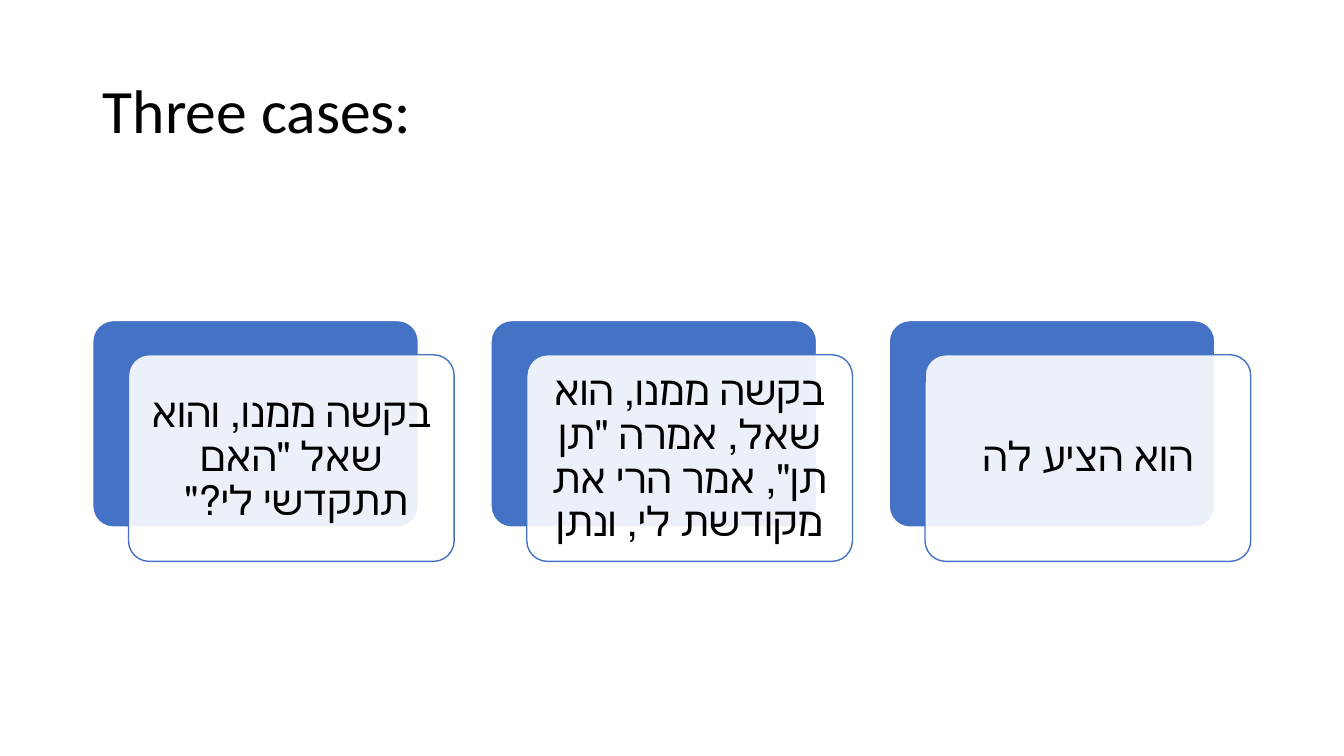
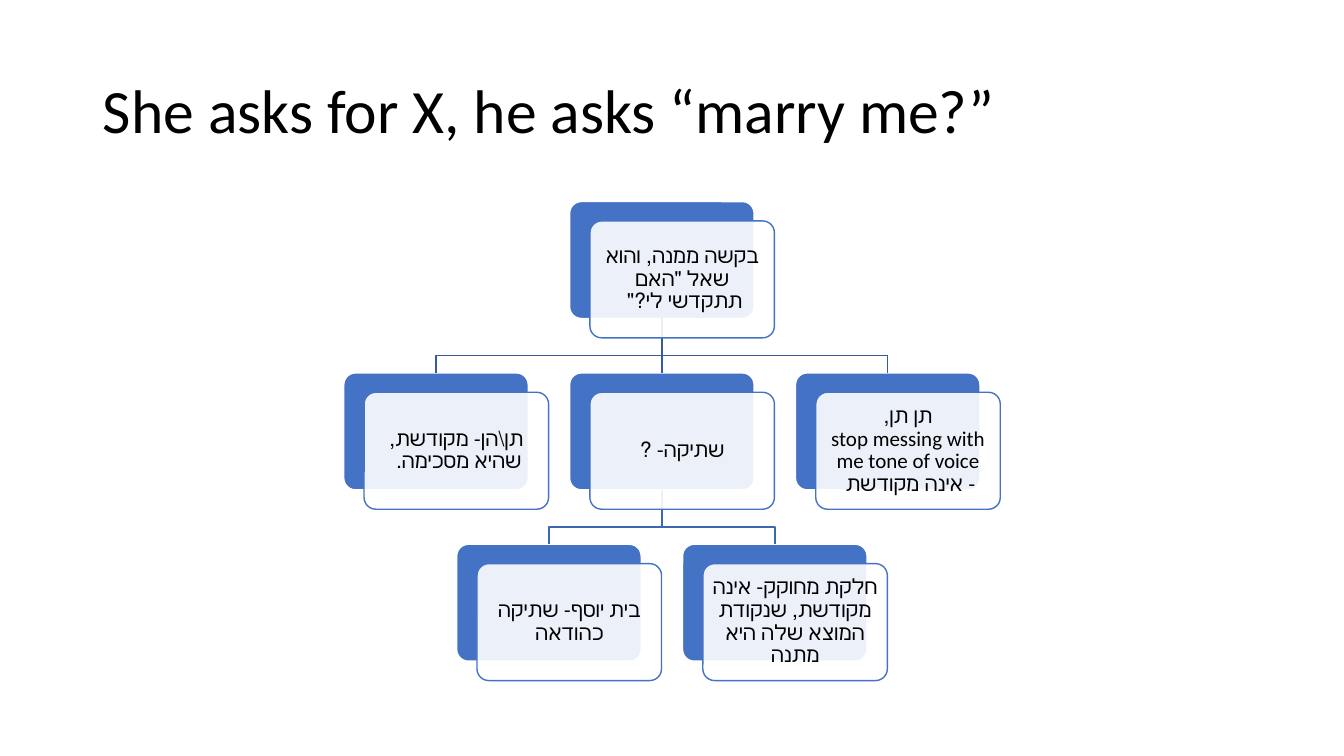
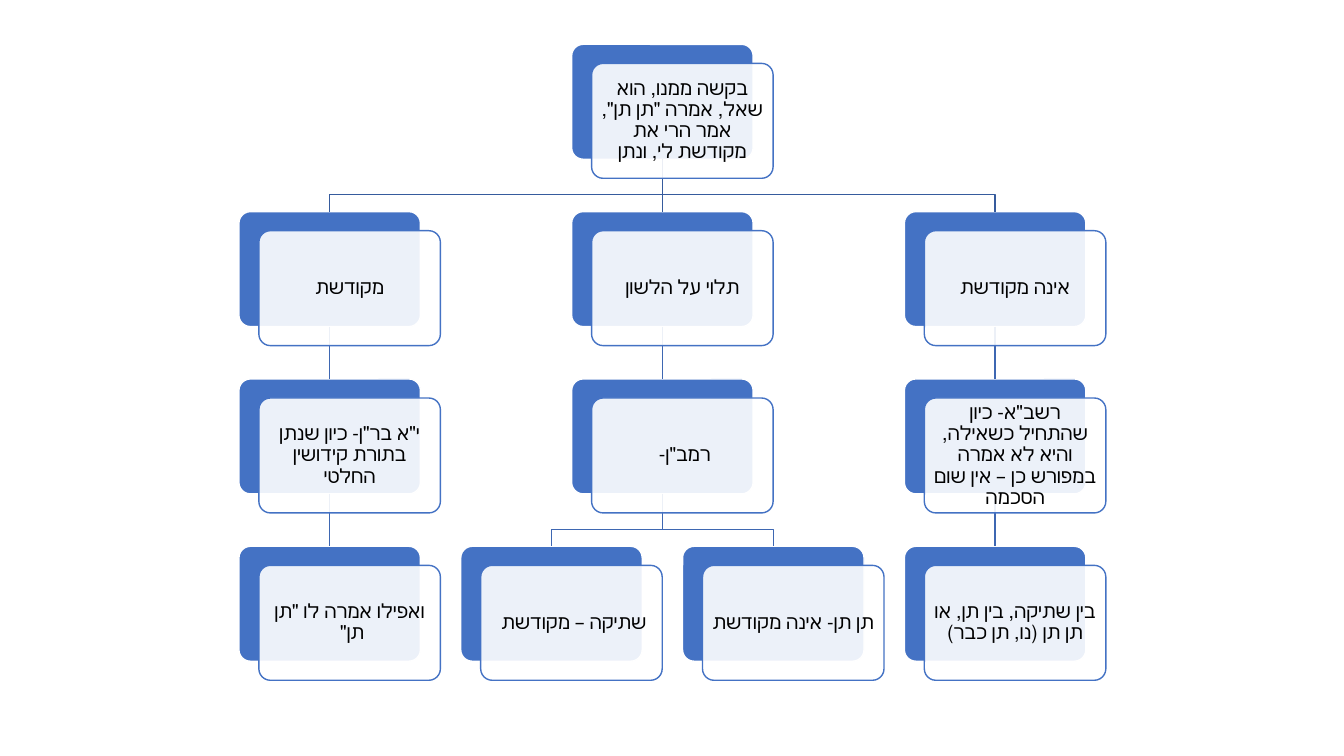
from dataclasses import dataclass
from typing import Optional

from lxml import etree
from pptx import Presentation
from pptx.dml.color import RGBColor
from pptx.enum.shapes import MSO_CONNECTOR, MSO_SHAPE
from pptx.enum.text import MSO_ANCHOR, MSO_AUTO_SIZE, PP_ALIGN
from pptx.oxml.ns import qn
from pptx.shapes.autoshape import Shape
from pptx.slide import Slide
from pptx.text.text import TextFrame
from pptx.util import Inches, Pt

ROUND = MSO_SHAPE.ROUNDED_RECTANGLE
STRAIGHT = MSO_CONNECTOR.STRAIGHT
MIDDLE = MSO_ANCHOR.MIDDLE
NO_FIT = MSO_AUTO_SIZE.NONE
LEFT = PP_ALIGN.LEFT
CENTER = PP_ALIGN.CENTER

FONT = "Calibri"
BLACK, WHITE, BLUE = "000000", "FFFFFF", "4472C4"
TOP_LINE, LOW_LINE = "365B9D", "3E67B2"
BEND = 0.17
SHIFT_X, SHIFT_Y = 0.11, 0.105


@dataclass(frozen=True)
class Node:
    text: str
    col: float
    row: int = 0
    parent: Optional[int] = None


@dataclass(frozen=True)
class Grid:
    left: float
    top: float
    step_x: float
    step_y: float
    width: float
    height: float
    size: int
    inset: float


@dataclass(frozen=True)
class Page:
    title: str
    grid: Grid
    nodes: tuple[Node, ...]


PAGES = (
    Page("Three cases:", Grid(0.92, 3.18, 3.95, 0, 3.23, 2.05, 29, 0.12), (
        Node('בקשה ממנו, והוא שאל "האם תתקדשי לי?" ', 0),
        Node('בקשה ממנו, הוא שאל, אמרה "תן תן", אמר הרי את מקודשת לי, ונתן', 1),
        Node("הוא הציע לה", 2),
    )),
    Page("She asks for X, he asks “marry me?”",
         Grid(3.41, 2, 2.24, 1.7, 1.83, 1.16, 15, 0.06), (
        Node('בקשה ממנה, והוא שאל "האם תתקדשי לי?" ', 1),
        Node("תן\\הן- מקודשת, שהיא מסכימה. ", 0, 1, 0),
        Node("שתיקה- ?", 1, 1, 0),
        Node("בית יוסף- שתיקה כהודאה", 0.5, 2, 2),
        Node("חלקת מחוקק- אינה מקודשת, שנקודת המוצא שלה היא מתנה", 1.5, 2, 2),
        Node("תן תן,\nstop messing with me tone of voice\n- אינה מקודשת ", 2, 1, 0),
    )),
    Page("", Grid(2.37, 0.44, 2.2, 1.66, 1.8, 1.14, 14, 0.06), (
        Node('בקשה ממנו, הוא שאל, אמרה "תן תן", אמר הרי את מקודשת לי, ונתן', 1.5),
        Node("מקודשת", 0, 1, 0),
        Node('י"א בר"ן- כיון שנתן בתורת קידושין החלטי', 0, 2, 1),
        Node('ואפילו אמרה לו "תן תן" ', 0, 3, 2),
        Node("תלוי על הלשון", 1.5, 1, 0),
        Node('רמב"ן- ', 1.5, 2, 4),
        Node("שתיקה – מקודשת ", 1, 3, 5),
        Node("תן תן- אינה מקודשת ", 2, 3, 5),
        Node("אינה מקודשת", 3, 1, 0),
        Node('רשב"א- כיון שהתחיל כשאילה, והיא לא אמרה במפורש כן – אין שום הסכמה', 3, 2, 8),
        Node("בין שתיקה, בין תן, או תן תן (נו, תן כבר)", 3, 3, 9),
    )),
)


def color(code: str) -> RGBColor:
    return RGBColor.from_string(code)


def write(frame: TextFrame, text: str, size: int, align: PP_ALIGN) -> None:
    frame.word_wrap = True
    frame.auto_size = NO_FIT
    frame.vertical_anchor = MIDDLE
    para = frame.paragraphs[0]
    para.alignment = align
    para.line_spacing = 0.9
    for index, line in enumerate(text.split("\n")):
        if index:
            para.add_line_break()
        run = para.add_run()
        run.text = line
        run.font.name = FONT
        run.font.size = Pt(size)
        run.font.color.rgb = color(BLACK)


def add_title(slide: Slide, text: str) -> None:
    title = slide.shapes.title
    title.left, title.top = Inches(0.92), Inches(0.4)
    title.width, title.height = Inches(11.5), Inches(1.45)
    write(title.text_frame, text, 44, LEFT)


def add_card(slide: Slide, grid: Grid, node: Node, shift: float,
             fill: str, line: str) -> Shape:
    left = grid.left + node.col * grid.step_x + shift * SHIFT_X * grid.width
    top = grid.top + node.row * grid.step_y + shift * SHIFT_Y * grid.width
    card = slide.shapes.add_shape(ROUND, Inches(left), Inches(top),
                                  Inches(grid.width), Inches(grid.height))
    card.adjustments[0] = 0.1
    card.shadow.inherit = False
    card.fill.solid()
    card.fill.fore_color.rgb = color(fill)
    card.line.color.rgb = color(line)
    card.line.width = Pt(1)
    return card


def add_front(slide: Slide, grid: Grid, node: Node) -> None:
    card = add_card(slide, grid, node, 1, WHITE, BLUE)
    paint = card._element.spPr.find(qn("a:solidFill"))[0]
    etree.SubElement(paint, qn("a:alpha"), val="90000")
    frame = card.text_frame
    frame.margin_left = frame.margin_right = Inches(grid.inset)
    frame.margin_top = frame.margin_bottom = Inches(grid.inset)
    write(frame, node.text, grid.size, CENTER)
    frame.paragraphs[0]._p.get_or_add_pPr().set("rtl", "1")


def add_link(slide: Slide, upper: Shape, lower: Shape, level: bool, tone: str) -> None:
    start = upper.left + upper.width // 2, upper.top + upper.height
    end = lower.left + lower.width // 2, lower.top
    if level:
        link = slide.shapes.add_connector(STRAIGHT, *start, *end)
        link.begin_connect(upper, 2)
        link.end_connect(lower, 0)
        etree.SubElement(link._element.spPr, qn("a:effectLst"))
    else:
        bend = end[1] - Inches(BEND)
        pen = slide.shapes.build_freeform(*start, scale=1.0)
        pen.add_line_segments([(start[0], bend), (end[0], bend), end], close=False)
        link = pen.convert_to_shape()
        link.fill.background()
        link.shadow.inherit = False
    link.line.color.rgb = color(tone)
    link.line.width = Pt(1)


def add_tree(slide: Slide, grid: Grid, nodes: tuple[Node, ...]) -> None:
    backs = [add_card(slide, grid, node, 0, BLUE, WHITE) for node in nodes]
    for node, back in zip(nodes, backs):
        if node.parent is not None:
            level = node.col == nodes[node.parent].col
            tone = TOP_LINE if node.row == 1 else LOW_LINE
            add_link(slide, backs[node.parent], back, level, tone)
    for node in nodes:
        add_front(slide, grid, node)


def main() -> None:
    deck = Presentation()
    deck.slide_width, deck.slide_height = Inches(13.33), Inches(7.5)
    for page in PAGES:
        slide = deck.slides.add_slide(deck.slide_layouts[5 if page.title else 6])
        if page.title:
            add_title(slide, page.title)
        add_tree(slide, page.grid, page.nodes)
    deck.save("out.pptx")


if __name__ == "__main__":
    main()
